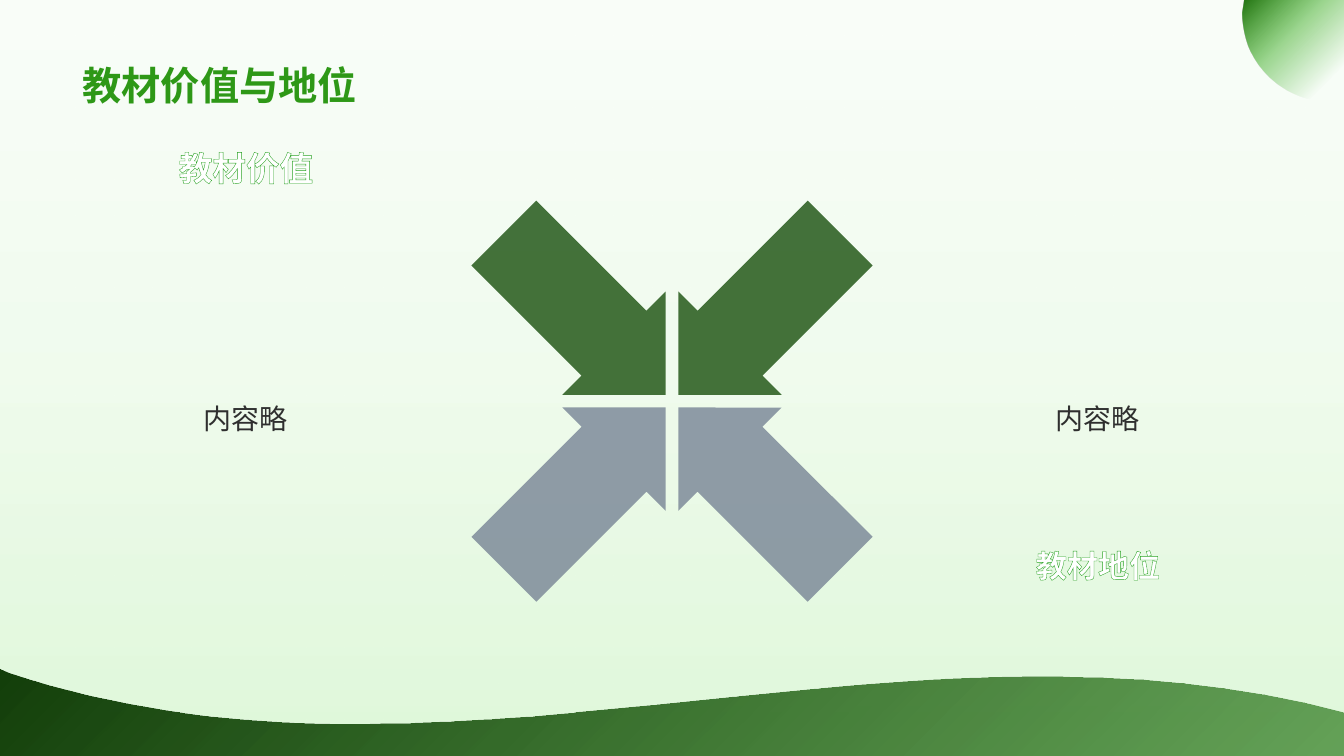
from lxml.etree import SubElement
from pptx import Presentation
from pptx.dml.color import RGBColor
from pptx.enum.shapes import MSO_SHAPE as SHAPE
from pptx.enum.text import MSO_ANCHOR as ANCHOR, PP_ALIGN as ALIGN
from pptx.oxml.ns import qn
from pptx.util import Inches, Pt

W, H = 13.33, 7.5
COLORS = {
    "white": "FFFFFF", "mist": "F9FEF8", "mint": "E0F9DB",
    "forest": "133F0A", "leaf": "237312", "fresh": "34AA1A",
    "bright": "46DE25", "heading": "2E9817", "pine": "184F0C",
    "slate": "778495", "ink": "2F2F2F", "outline": "2BA325",
}
CJK = "Noto Sans CJK SC"


def set_alpha(color, percent):
    if percent < 100:
        SubElement(color, qn("a:alpha"), val=str(percent * 1000))


def set_gradient(fill, parent, stops, angle):
    """Give fill, held by the XML element parent, stops of (position, colour, opacity)."""
    fill.gradient()
    fill.gradient_angle = 360 - angle
    gs_lst = parent.find(qn("a:gradFill")).find(qn("a:gsLst"))
    for gs in list(gs_lst):
        gs_lst.remove(gs)
    for pos, name, percent in stops:
        gs = SubElement(gs_lst, qn("a:gs"), pos=str(pos * 1000))
        set_alpha(SubElement(gs, qn("a:srgbClr"), val=COLORS[name]), percent)


def write(tf, text, size, color=None, font=CJK, bold=False, align=ALIGN.LEFT,
          anchor=ANCHOR.TOP, spacing=1.0, outline=None):
    """Fill a text frame with one formatted run and return the run."""
    tf.word_wrap = True
    tf.vertical_anchor = anchor
    p = tf.paragraphs[0]
    p.alignment, p.line_spacing = align, spacing
    r = p.add_run()
    r.text = text
    r.font.size, r.font.bold, r.font.name = Pt(size), bold, font
    if color:
        r.font.color.rgb = RGBColor.from_string(COLORS[color])
    rPr = r.font._element
    rPr.find(qn("a:latin")).addnext(SubElement(rPr, qn("a:ea"), typeface=CJK))
    if outline:
        ln = SubElement(rPr, qn("a:ln"), w=str(Pt(0.52)))
        SubElement(SubElement(ln, qn("a:solidFill")), qn("a:srgbClr"), val=COLORS[outline])
        rPr.insert(0, ln)
    return r


class SlideBuilder:
    def __init__(self, prs):
        self.slide = prs.slides.add_slide(prs.slide_layouts[5])
        self.shapes = self.slide.shapes

    def background(self, stops, angle):
        bg = self.slide.background
        bg.fill.solid()
        set_gradient(bg.fill, self.slide._element.cSld.bg.bgPr, stops, angle)

    def finish(self, sp):
        sp.shadow.inherit = False
        sp.line.fill.background()
        return sp

    def panel(self, x, y, w, h, stops, angle):
        sp = self.finish(self.shapes.add_shape(
            SHAPE.RECTANGLE, Inches(x), Inches(y), Inches(w), Inches(h)))
        set_gradient(sp.fill, sp._element.spPr, stops, angle)

    def curved_shape(self, start, segments, stops, angle):
        """Each segment lists its points: one for a line, three for a cubic curve."""
        builder = self.shapes.build_freeform(*map(Inches, start))
        builder.add_line_segments([tuple(map(Inches, seg[-1])) for seg in segments], close=True)
        sp = self.finish(builder.convert_to_shape())
        lines = list(sp._element.spPr.iter(qn("a:lnTo")))
        for line, seg in zip(lines, segments):
            if len(seg) == 3:
                line.tag = qn("a:cubicBezTo")
                line.remove(line[0])
                for x, y in seg:
                    SubElement(line, qn("a:pt"), x=str(Inches(x) - sp.left),
                               y=str(Inches(y) - sp.top))
        set_gradient(sp.fill, sp._element.spPr, stops, angle)

    def arrow(self, cx, cy, w, h, rotation, color):
        sp = self.finish(self.shapes.add_shape(
            SHAPE.DOWN_ARROW, Inches(cx - w / 2), Inches(cy - h / 2), Inches(w), Inches(h)))
        sp.rotation = rotation
        sp.adjustments[0], sp.adjustments[1] = 0.628, 0.5
        sp.fill.solid()
        sp.fill.fore_color.rgb = RGBColor.from_string(COLORS[color])
        set_alpha(sp._element.spPr.find(qn("a:solidFill"))[0], 80)

    def text(self, x, y, w, h, content, **style):
        box = self.shapes.add_textbox(Inches(x), Inches(y), Inches(w), Inches(h))
        write(box.text_frame, content, align=ALIGN.CENTER, **style)

    def title(self, x, y, w, h, content, stops, angle):
        sp = self.shapes.title
        sp.left, sp.top, sp.width, sp.height = map(Inches, (x, y, w, h))
        sp.text_frame.margin_bottom = Inches(0.04)
        r = write(sp.text_frame, content, 28, font="Lato", bold=True, anchor=ANCHOR.BOTTOM)
        set_gradient(r.font.fill, r.font._element, stops, angle)
        self.shapes._spTree.append(sp._element)  # in front of the backdrop


def main():
    prs = Presentation()
    prs.slide_width, prs.slide_height = Inches(W), Inches(H)
    s = SlideBuilder(prs)

    s.background([(48, "white", 100), (100, "mint", 100)], 90)
    s.panel(0, 0, W, H, [(0, "mist", 80), (100, "mint", 78)], 90)
    wave = [[(0.09, 6.67)],
            [(4.29, 8.08), (8.7, 6.02), (12.93, 6.97)],
            [(W, 7.07)], [(W, H)], [(0, H)]]
    s.curved_shape((0, 6.63), wave, [(0, "forest", 100), (100, "leaf", 65)], 45)
    corner = [[(W, 0.99)], [(13.26, 1)],
              [(12.89, 1.03), (12.53, 0.82), (12.38, 0.46)],
              [(12.34, 0.35), (12.32, 0.24), (12.32, 0.13)],
              [(12.34, 0)]]
    s.curved_shape((W, 0), corner,
                   [(0, "leaf", 100), (41, "fresh", 47), (82, "fresh", 0)], 45)

    s.title(0.72, 0.14, 11.88, 0.98, "教材价值与地位",
            [(2, "bright", 100), (52, "heading", 100), (100, "pine", 100)], 85)

    center_x, center_y, offset = W / 2, 3.98, 1.73 / 2
    for dx, dy, rotation, color in ((1, 1, 135, "slate"), (-1, -1, 315, "pine"),
                                    (-1, 1, 225, "slate"), (1, -1, 45, "pine")):
        s.arrow(center_x + dx * offset, center_y + dy * offset, 1.45, 2.27, rotation, color)

    for x, heading, heading_y, size, spacing in ((0.9, "教材价值", 1.42, 24, 1.0),
                                                 (9.35, "教材地位", 5.35, 22.2, 1.1)):
        s.text(x, 3.87, 3.08, 0.96, "内容略", size=20, color="ink", spacing=1.2)
        s.text(x, heading_y, 3.08, 0.49, heading, size=size, color="white", bold=True,
               anchor=ANCHOR.BOTTOM, spacing=spacing, outline="outline")

    prs.save("out.pptx")


if __name__ == "__main__":
    main()
